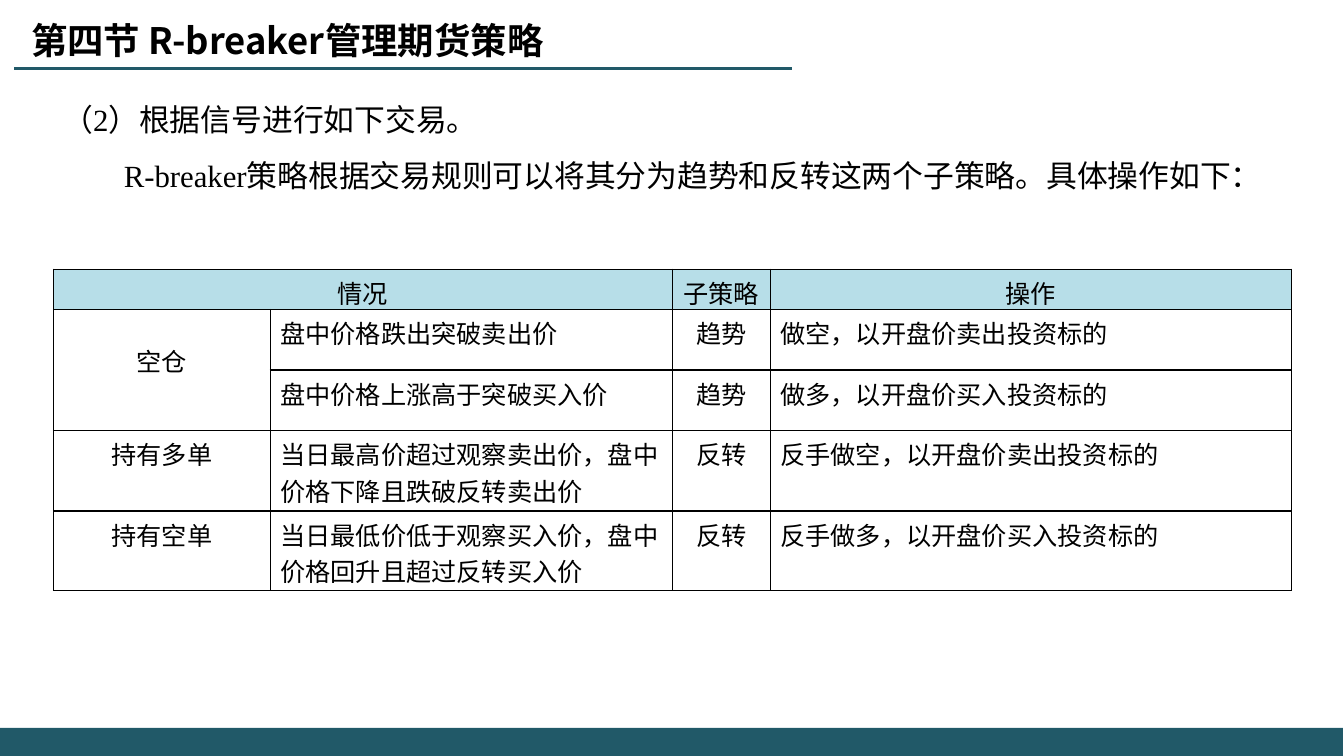
from lxml.etree import SubElement
from pptx import Presentation
from pptx.dml.color import RGBColor
from pptx.enum.shapes import MSO_CONNECTOR, MSO_SHAPE
from pptx.enum.text import PP_ALIGN
from pptx.oxml.ns import qn
from pptx.util import Emu, Pt

EMU_PER_PX = 9144  # 100 px to the inch


def px(length):
    return Emu(length * EMU_PER_PX)


def color(hex_code):
    return RGBColor.from_string(hex_code)


class SlideBuilder:
    TEAL, HEADER, BLACK = "215968", "B7DEE8", "000000"
    CJK, SERIF, SANS = "Noto Sans CJK SC", "Times New Roman", "Arial"

    def __init__(self, slide):
        self.slide = slide

    def bar(self, left, top, width, height):
        shape = self.slide.shapes.add_shape(
            MSO_SHAPE.RECTANGLE, px(left), px(top), px(width), px(height))
        shape.shadow.inherit = False
        shape.fill.solid()
        shape.fill.fore_color.rgb = color(self.TEAL)
        shape.line.fill.background()

    def rule(self, x1, x2, y):
        line = self.slide.shapes.add_connector(
            MSO_CONNECTOR.STRAIGHT, px(x1), px(y), px(x2), px(y))
        line.line.color.rgb = color(self.TEAL)
        line.line.width = Pt(1.5)
        SubElement(line._element.spPr, qn("a:effectLst"))

    def run(self, paragraph, text, size, font, bold=False):
        run = paragraph.add_run()
        run.text = text
        run.font.size = Pt(size)
        run.font.bold = bold
        run.font.name = font
        run.font.color.rgb = color(self.BLACK)
        SubElement(run._r.get_or_add_rPr(), qn("a:ea"), typeface=self.CJK)

    def text(self, box, paragraphs, size, font, bold=False, spacing=None):
        """Add a text box; paragraphs are (first-line indent, text) pairs."""
        frame = self.slide.shapes.add_textbox(*map(px, box)).text_frame
        frame.word_wrap = True
        for index, (indent, text) in enumerate(paragraphs):
            paragraph = frame.add_paragraph() if index else frame.paragraphs[0]
            paragraph.line_spacing = spacing
            if indent:
                properties = paragraph._p.get_or_add_pPr()
                properties.set("marL", "0")
                properties.set("indent", str(px(indent)))
            self.run(paragraph, text, size, font, bold)

    def borders(self, cell):
        properties = cell._tc.get_or_add_tcPr()
        for side in ("lnL", "lnR", "lnT", "lnB"):
            line = SubElement(properties, qn(f"a:{side}"), w=str(Pt(1)))
            fill = SubElement(line, qn("a:solidFill"))
            SubElement(fill, qn("a:srgbClr"), val=self.BLACK)

    def table(self, left, top, columns, rows, content, merges, centered):
        table = self.slide.shapes.add_table(
            len(rows), len(columns), px(left), px(top),
            px(sum(columns)), px(sum(rows))).table
        table.first_row = table.horz_banding = False
        for column, width in zip(table.columns, columns):
            column.width = px(width)
        for row, height in zip(table.rows, rows):
            row.height = px(height)
        for r, texts in enumerate(content):
            for c, text in enumerate(texts):
                cell = table.cell(r, c)
                cell.margin_bottom = 0
                self.borders(cell)
                if r == 0:
                    cell.fill.solid()
                    cell.fill.fore_color.rgb = color(self.HEADER)
                else:
                    cell.fill.background()
                if text:
                    paragraph = cell.text_frame.paragraphs[0]
                    if r == 0 or c in centered:
                        paragraph.alignment = PP_ALIGN.CENTER
                    self.run(paragraph, text, 18, self.SERIF if r else self.SANS)
        for start, end in merges:
            table.cell(*start).merge(table.cell(*end))
        return table


def main():
    deck = Presentation()
    deck.slide_width, deck.slide_height = px(1333), px(750)
    page = SlideBuilder(deck.slides.add_slide(deck.slide_layouts[6]))

    # Footer band and title rule
    page.bar(0, 722, 1332, 28)
    page.rule(14, 786, 68)

    # Introduction and title
    page.text((52, 77, 1228, 114), [
        (0, "（2）根据信号进行如下交易。"),
        (61, "R-breaker策略根据交易规则可以将其分为趋势和反转这两个子策略。具体操作如下："),
    ], 22, page.SERIF, spacing=1.5)
    page.text((21, 13, 1010, 54), [(0, "第四节 R-breaker管理期货策略")],
              26, page.CJK, bold=True)

    # Trading rules
    trading_rules = [
        ("情况", "", "子策略", "操作"),
        ("空仓", "盘中价格跌出突破卖出价", "趋势", "做空，以开盘价卖出投资标的"),
        ("", "盘中价格上涨高于突破买入价", "趋势", "做多，以开盘价买入投资标的"),
        ("持有多单", "当日最高价超过观察卖出价，盘中价格下降且跌破反转卖出价",
         "反转", "反手做空，以开盘价卖出投资标的"),
        ("持有空单", "当日最低价低于观察买入价，盘中价格回升且超过反转买入价",
         "反转", "反手做多，以开盘价买入投资标的"),
    ]
    rules_table = page.table(
        53, 267, (215, 399, 97, 517), (40, 60, 60, 80, 79), trading_rules,
        merges=[((0, 0), (0, 1)), ((1, 0), (2, 0))], centered=(0, 2))
    rules_table.cell(1, 0).margin_top = px(33)

    deck.save("out.pptx")


if __name__ == "__main__":
    main()
